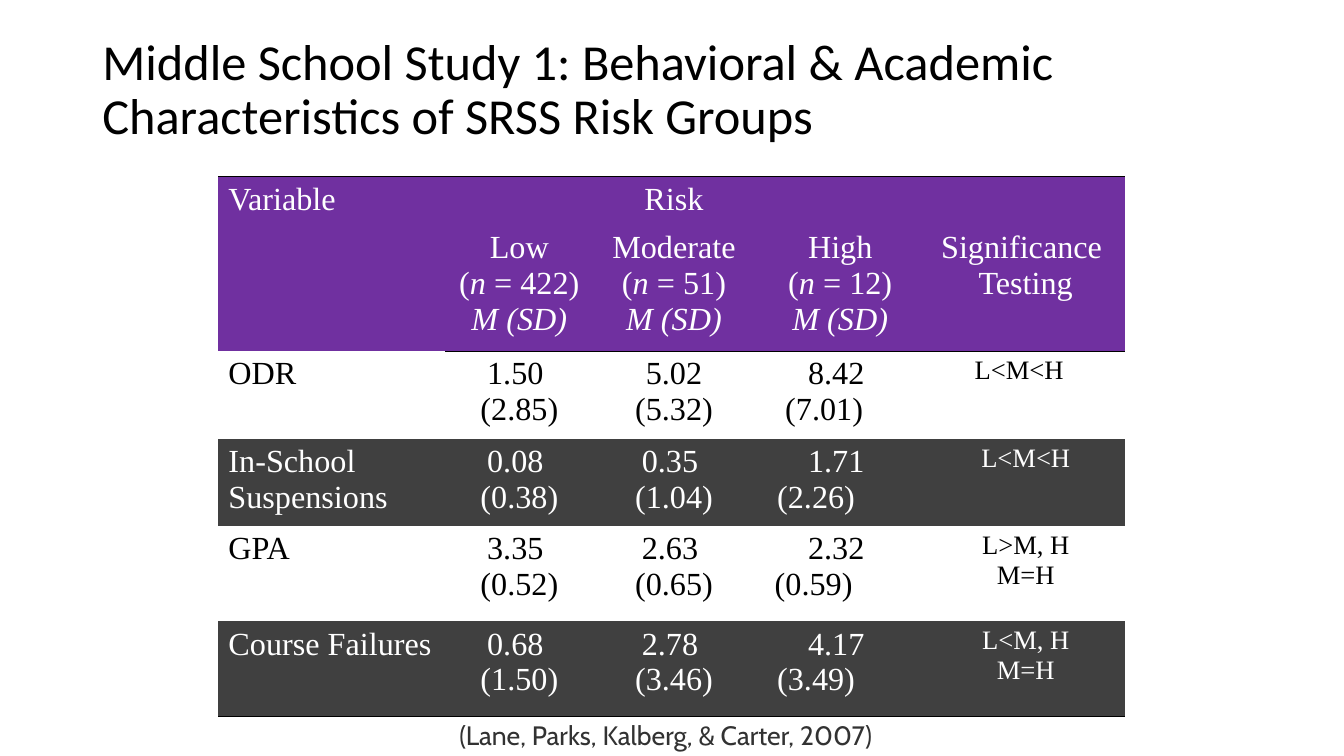
import pptx
import pptx.dml.color
import pptx.enum.text
import pptx.oxml
import pptx.oxml.ns
import pptx.util

Pt = pptx.util.Pt
ALIGN = pptx.enum.text.PP_ALIGN
ANCHOR = pptx.enum.text.MSO_ANCHOR

BLACK, WHITE, PURPLE, GRAY = "000000", "FFFFFF", "7030A0", "404040"
BODY_FONT = "Times New Roman"
NO_STYLE = "{2D5ABB26-0587-4C30-8999-92F81FD0307C}"

COLUMN_WIDTHS = [162, 106, 115, 122.5, 142.5]
ROW_HEIGHTS = [34.5, 90, 62.5, 62.5, 68, 68]
HEADER = [
    ["Variable", "", "Risk", "", ""],
    ["", "Low\n(*n* = 422)\n*M (SD)*", "Moderate\n(*n* = 51)\n*M (SD)*",
     "High\n(*n* = 12)\n*M (SD)*", "Significance \nTesting"],
]
BODY = [
    ["ODR", "1.50 \n(2.85)", "5.02\n(5.32)", "8.42 \n(7.01)", "L<M<H"],
    ["In-School Suspensions", "0.08 \n(0.38)", "0.35 \n(1.04)", "1.71 \n(2.26)", "L<M<H"],
    ["GPA", "3.35 \n(0.52)", "2.63 \n(0.65)", "2.32 \n(0.59)", "L>M, H\nM=H"],
    ["Course Failures", "0.68 \n(1.50)", "2.78 \n(3.46)", "4.17 \n(3.49)", "L<M, H\nM=H"],
]
# Right margin (row, column), which moves centred text to the left
RIGHT_OFFSETS = {(2, 3): 23, (3, 3): 34.5, (4, 3): 38, (5, 3): 34.5, (2, 4): 9.5}


def rgb(color):
    return pptx.dml.color.RGBColor.from_string(color)


def style_font(font, name, size, color):
    font.name, font.size = name, Pt(size)
    font.color.rgb = rgb(color)


def add_text(slide, box, text, font, size, color, align, anchor):
    frame = slide.shapes.add_textbox(*map(Pt, box)).text_frame
    frame.word_wrap = True
    frame.vertical_anchor = anchor
    frame.text = text
    paragraph = frame.paragraphs[0]
    paragraph.alignment = align
    style_font(paragraph.runs[0].font, font, size, color)
    return paragraph


def add_border(cell, side, visible):
    paint = (f'<a:solidFill><a:srgbClr val="{BLACK}"/></a:solidFill>'
             if visible else "<a:noFill/>")
    line = pptx.oxml.parse_xml(
        f'<a:{side} {pptx.oxml.ns.nsdecls("a")} w="12700">{paint}</a:{side}>')
    cell._tc.get_or_add_tcPr().insert(0, line)


def fill_cell(cell, text, size, color, fill, align, offset):
    if fill:
        cell.fill.solid()
        cell.fill.fore_color.rgb = rgb(fill)
    else:
        cell.fill.background()
    if offset:
        cell.margin_left, cell.margin_right = Pt(0), Pt(offset)
    if not text:
        return
    lines = text.split("\n")
    cell.text_frame.text = "\n".join([""] * len(lines))
    for number, (paragraph, line) in enumerate(zip(cell.text_frame.paragraphs, lines)):
        paragraph.alignment = align
        # The mean stays centred in the column, only the SD below it moves
        if offset and number < len(lines) - 1:
            paragraph._p.get_or_add_pPr().set("marL", str(Pt(offset)))
        for part, segment in enumerate(line.split("*")):
            if segment:
                run = paragraph.add_run()
                run.text = segment
                style_font(run.font, BODY_FONT, size, color)
                run.font.italic = part % 2 == 1


def add_risk_table(slide, left, top):
    rows = HEADER + BODY
    table = slide.shapes.add_table(
        len(rows), len(COLUMN_WIDTHS), Pt(left), Pt(top),
        Pt(sum(COLUMN_WIDTHS)), Pt(sum(ROW_HEIGHTS))).table
    table.first_row = table.horz_banding = False
    table._tbl.tblPr.find(pptx.oxml.ns.qn("a:tableStyleId")).text = NO_STYLE
    for column, width in zip(table.columns, COLUMN_WIDTHS):
        column.width = Pt(width)
    for row, height in zip(table.rows, ROW_HEIGHTS):
        row.height = Pt(height)

    last_row, last_column = len(rows) - 1, len(COLUMN_WIDTHS) - 1
    for r, texts in enumerate(rows):
        is_header = r < len(HEADER)
        fill = PURPLE if is_header else GRAY if r % 2 else None
        for c, text in enumerate(texts):
            cell = table.cell(r, c)
            size = 19 if c == last_column and not is_header else 23
            fill_cell(cell, text, size, WHITE if fill else BLACK, fill,
                      ALIGN.CENTER if c else ALIGN.LEFT, RIGHT_OFFSETS.get((r, c), 0))
            # Rules: table top, below the header, table bottom
            add_border(cell, "lnB", r == last_row or (r == 1 and c > 0))
            add_border(cell, "lnT", r == 0 or (r == 2 and c > 0))


def build_study_slide(presentation):
    slide = presentation.slides.add_slide(presentation.slide_layouts[6])
    # Title
    title = add_text(
        slide, (66, 13, 828, 104.4),
        "Middle School Study 1: Behavioral & Academic Characteristics of SRSS Risk Groups",
        "Calibri", 36, BLACK, ALIGN.LEFT, ANCHOR.MIDDLE)
    title.line_spacing = 0.9
    # Results by risk group
    add_risk_table(slide, 156, 126)
    # Citation
    add_text(slide, (192, 511, 438, 29), "(Lane, Parks, Kalberg, & Carter, 2007)",
             "Cabin", 19, "323232", ALIGN.RIGHT, ANCHOR.BOTTOM)


def main():
    presentation = pptx.Presentation()
    presentation.slide_width, presentation.slide_height = Pt(960), Pt(540)
    build_study_slide(presentation)
    presentation.save("out.pptx")


if __name__ == "__main__":
    main()
